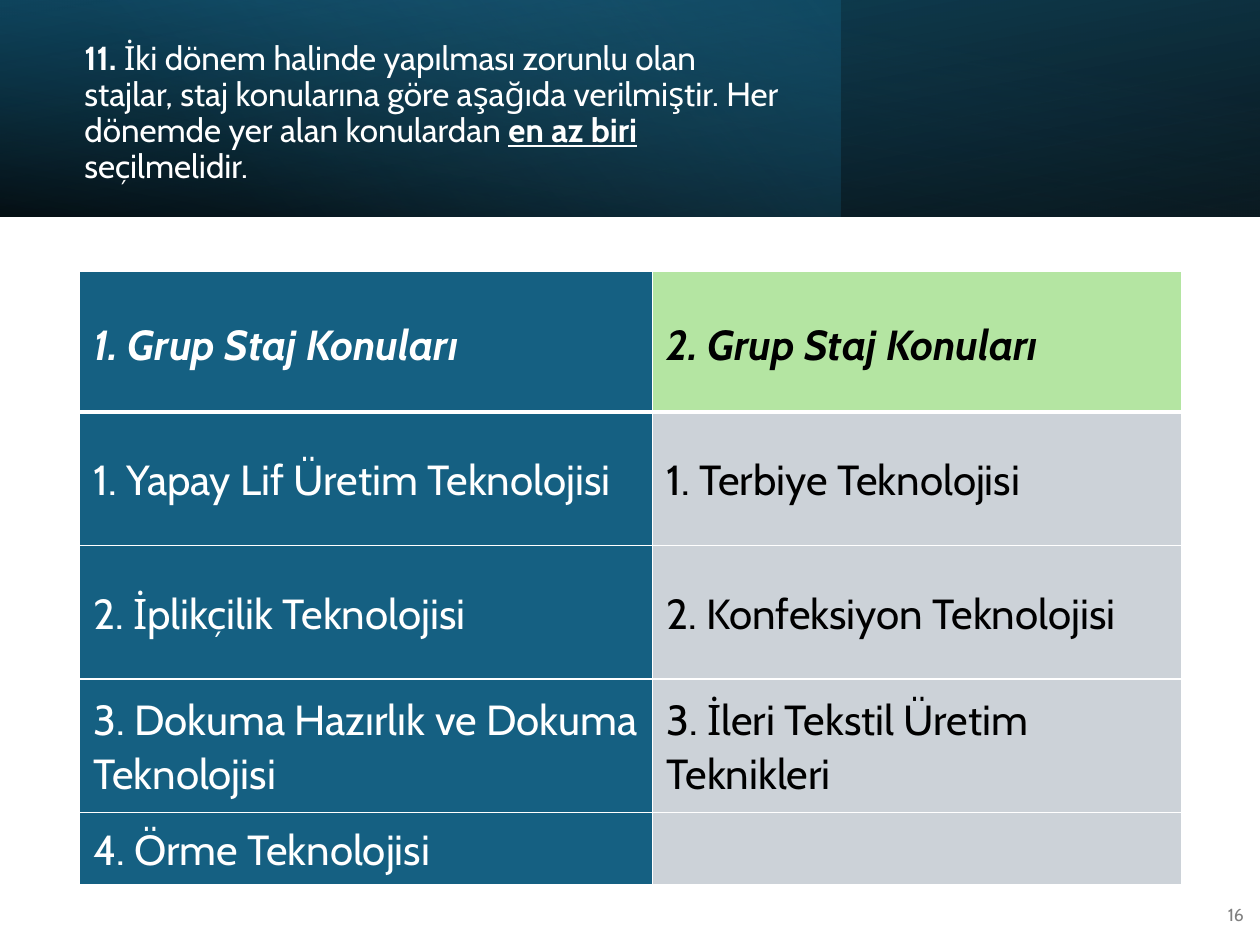
from lxml import etree
from pptx import Presentation
from pptx.dml.color import RGBColor
from pptx.enum.shapes import MSO_SHAPE
from pptx.enum.text import MSO_ANCHOR, MSO_AUTO_SIZE, PP_ALIGN
from pptx.oxml.ns import qn
from pptx.util import Inches, Pt

RECT = MSO_SHAPE.RECTANGLE
MIDDLE = MSO_ANCHOR.MIDDLE
FIXED = MSO_AUTO_SIZE.NONE
LEFT, RIGHT = PP_ALIGN.LEFT, PP_ALIGN.RIGHT

FONT = "Cabin"
WHITE = RGBColor(0xFF, 0xFF, 0xFF)
BLACK = RGBColor(0x00, 0x00, 0x00)
NAVY = RGBColor(0x10, 0x48, 0x62)
TEAL = RGBColor(0x15, 0x60, 0x82)
SKY = RGBColor(0x46, 0xB1, 0xE1)
GREEN = RGBColor(0xB4, 0xE5, 0xA2)
MIST = RGBColor(0xCC, 0xD2, 0xD8)
GRAY = RGBColor(0x80, 0x80, 0x80)


def style(run, size, color, bold=False):
    run.font.name = FONT
    run.font.size = Pt(size)
    run.font.color.rgb = color
    run.font.bold = bold


def border(cell, side, width):
    line = etree.SubElement(cell._tc.get_or_add_tcPr(), qn("a:ln" + side), w=str(Pt(width)))
    fill = etree.SubElement(line, qn("a:solidFill"))
    etree.SubElement(fill, qn("a:srgbClr"), val=str(WHITE))


prs = Presentation()
prs.slide_width = Inches(10)
prs.slide_height = Inches(7.5)
slide = prs.slides.add_slide(prs.slide_layouts[0])
sub = slide.placeholders[1]._element
sub.getparent().remove(sub)
title = slide.shapes.title

bands = [
    (10, 180, True, 100, [(0, BLACK, 96), (1, NAVY, 100)]),
    (6.67, 0, False, 140, [(0, TEAL, 41), (0.74, SKY, 0)]),
    (10, 0, True, 260, [(0, BLACK, 63), (0.78, TEAL, 15)]),
]
bands[0][4][1] = (1, NAVY, 100)
for width, turn, flip, angle, stops in bands:
    band = slide.shapes.add_shape(RECT, 0, 0, Inches(width), Inches(1.72))
    band.shadow.inherit = False
    band.line.fill.background()
    band.rotation = turn
    if flip:
        band._element.spPr.xfrm.set("flipH", "1")
    band.fill.gradient()
    band.fill.gradient_angle = 360 - angle
    for stop, (place, color, alpha) in zip(band.fill.gradient_stops, stops):
        stop.position = place
        stop.color.rgb = color
    tints = band._element.spPr.findall(".//" + qn("a:srgbClr"))
    for tint, (place, color, alpha) in zip(tints, stops):
        etree.SubElement(tint, qn("a:alpha"), val=str(alpha * 1000))

title.left, title.top = Inches(0.57), Inches(0.27)
title.width, title.height = Inches(5.79), Inches(1.27)
slide.shapes._spTree.append(title._element)
frame = title.text_frame
frame.word_wrap = True
frame.auto_size = FIXED
frame.vertical_anchor = MIDDLE
para = frame.paragraphs[0]
para.alignment = LEFT
para.line_spacing = 0.9
parts = [
    ("11. ", True, False),
    ("İki dönem halinde yapılması zorunlu olan stajlar, staj konularına göre "
     "aşağıda verilmiştir. Her dönemde yer alan konulardan ", False, False),
    ("en az biri", True, True),
    (" seçilmelidir.", False, False),
]
for text, bold, under in parts:
    run = para.add_run()
    run.text = text
    style(run, 19, WHITE, bold)
    run.font.underline = under

page = slide.shapes.add_textbox(Inches(9.6), Inches(7.06), Inches(0.37), Inches(0.4))
frame = page.text_frame
frame.word_wrap = True
frame.vertical_anchor = MIDDLE
para = frame.paragraphs[0]
para.text = "16"
para.alignment = RIGHT
para.space_after = Pt(6)
style(para.runs[0], 10, GRAY)

rows = [
    ("1. Grup Staj Konuları", "2. Grup Staj Konuları"),
    ("1. Yapay Lif Üretim Teknolojisi", "1. Terbiye Teknolojisi"),
    ("2. İplikçilik Teknolojisi", "2. Konfeksiyon Teknolojisi"),
    ("3. Dokuma Hazırlık ve Dokuma Teknolojisi", "3. İleri Tekstil Üretim Teknikleri"),
    ("4. Örme Teknolojisi", ""),
]
table = slide.shapes.add_table(
    len(rows), 2, Inches(0.63), Inches(2.15), Inches(8.75), Inches(4.87)).table
for col, width in zip(table.columns, (4.55, 4.2)):
    col.width = Inches(width)
for row, height in zip(table.rows, (1.12, 1.06, 1.06, 1.06, 0.57)):
    row.height = Inches(height)

for i, texts in enumerate(rows):
    head = i == 0
    for j, text in enumerate(texts):
        cell = table.cell(i, j)
        cell.vertical_anchor = MIDDLE
        cell.margin_left = cell.margin_right = Inches(0.11)
        cell.margin_top = cell.margin_bottom = 0
        for side in "LRTB":
            thick = (i, side) in ((0, "B"), (1, "T"))
            border(cell, side, 3 if thick else 1)
        cell.fill.solid()
        cell.fill.fore_color.rgb = TEAL if j == 0 else GREEN if head else MIST
        para = cell.text_frame.paragraphs[0]
        para.text = text
        para.line_spacing = 1.15 if head else 1.07
        for run in para.runs:
            style(run, 24, WHITE if j == 0 else BLACK, head)
            run.font.italic = head

prs.save("out.pptx")
